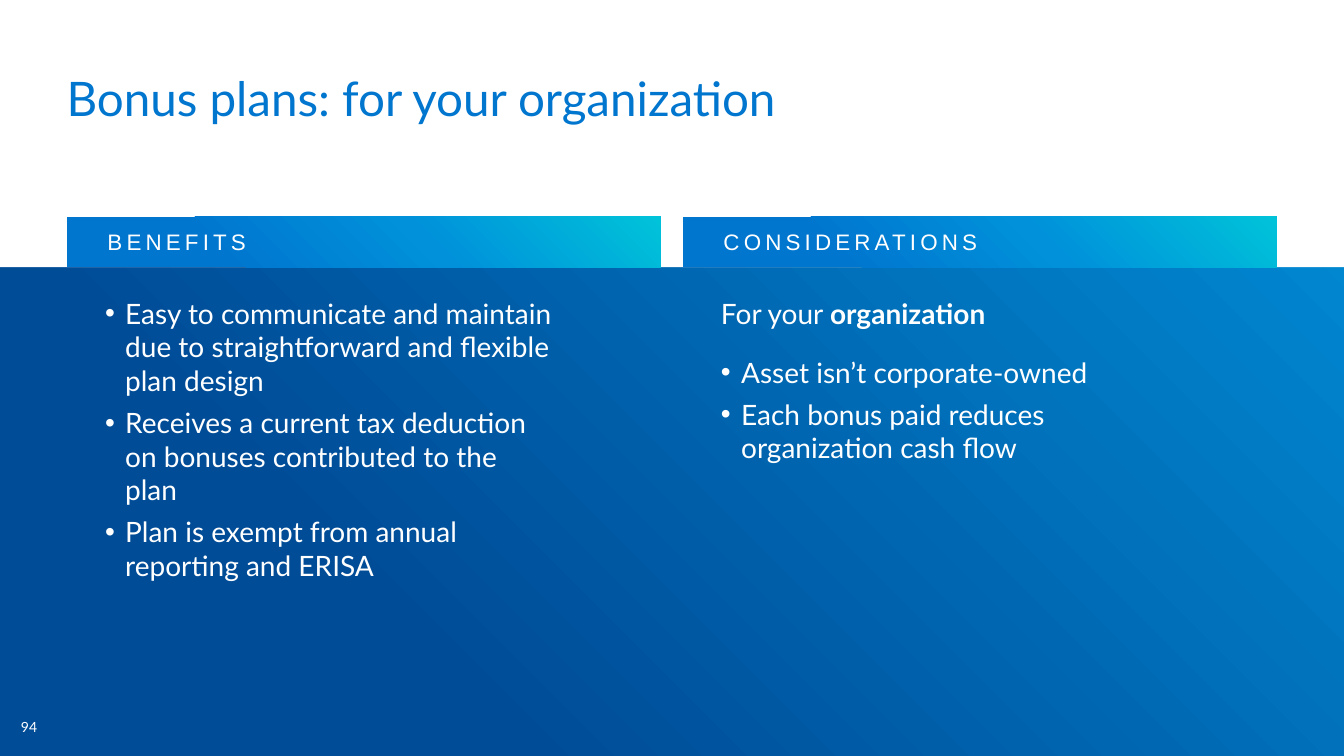
from lxml import etree
from pptx import Presentation
from pptx.dml.color import RGBColor
from pptx.enum.shapes import MSO_SHAPE
from pptx.enum.text import MSO_ANCHOR, MSO_AUTO_SIZE, PP_ALIGN
from pptx.oxml.ns import qn
from pptx.util import Pt

RECT = MSO_SHAPE.RECTANGLE
TOP, MIDDLE, BOTTOM = MSO_ANCHOR.TOP, MSO_ANCHOR.MIDDLE, MSO_ANCHOR.BOTTOM
LEFT = PP_ALIGN.LEFT
FIXED = MSO_AUTO_SIZE.NONE

WHITE = RGBColor(0xFF, 0xFF, 0xFF)
NAVY = RGBColor(0x00, 0x4C, 0x97)
BLUE = RGBColor(0x00, 0x76, 0xCF)
SKY = RGBColor(0x00, 0x91, 0xDA)
TEAL = RGBColor(0x00, 0xC3, 0xD9)


def add_rect(x, y, w, h, stops):
    """Add a borderless rectangle, plain for one stop, else a gradient."""
    rect = slide.shapes.add_shape(RECT, Pt(x), Pt(y), Pt(w), Pt(h))
    rect.shadow.inherit = False
    rect.line.fill.background()
    if len(stops) == 1:
        rect.fill.solid()
        rect.fill.fore_color.rgb = stops[0][1]
        return rect
    rect.fill.gradient()
    rect.fill.gradient_angle = 45
    ramp = rect._element.spPr.find(".//" + qn("a:gsLst"))
    ramp.clear()
    for place, color in stops:
        stop = etree.SubElement(ramp, qn("a:gs"), pos=str(place * 1000))
        etree.SubElement(stop, qn("a:srgbClr"), val=str(color))
    return rect


def set_frame(shape, anchor, left=0, right=0, edge=0):
    """Set wrapping, anchor and insets of a text frame."""
    frame = shape.text_frame
    frame.word_wrap = True
    frame.auto_size = FIXED
    frame.vertical_anchor = anchor
    frame.margin_left, frame.margin_right = Pt(left), Pt(right)
    frame.margin_top = frame.margin_bottom = Pt(edge)
    return frame


prs = Presentation()
prs.slide_width, prs.slide_height = Pt(960), Pt(540)
slide = prs.slides.add_slide(prs.slide_layouts[3])
title, *bodies = slide.placeholders

# Backdrop, placed behind the placeholders
back = add_rect(0, 0, 960, 540, [(25, NAVY), (99, SKY)])
band = add_rect(0, 0, 960, 190.8, [(0, WHITE)])
for depth, rect in enumerate((back, band), start=2):
    slide.shapes._spTree.insert(depth, rect._element)

# Title
title.left, title.top, title.width, title.height = Pt(47.5), Pt(49), Pt(864), Pt(36)
frame = set_frame(title, TOP)
frame.text = "Bonus plans: for your organization"
para = frame.paragraphs[0]
para.alignment = LEFT
para.font.name, para.font.size = "Lato", Pt(34)
para.font.color.rgb = BLUE

# Column headings
for x, label in ((48, "BENEFITS"), (488, "CONSIDERATIONS")):
    head = add_rect(x, 154.8, 424, 36, [(25, BLUE), (60, SKY), (100, TEAL)])
    frame = set_frame(head, MIDDLE, 28.8, 28.8, 3.6)
    frame.text = label
    para = frame.paragraphs[0]
    para.alignment = LEFT
    font = para.runs[0].font
    font.name, font.size = "Arial", Pt(16)
    font.color.rgb = WHITE
    font._element.set("spc", "300")

# Column lists: left, width, height, right inset, lead line, bullets
columns = [
    (75, 341.3, 269.3, 21.6, None, [
        "Easy to communicate and maintain due to straightforward and flexible plan design",
        "Receives a current tax deduction on bonuses contributed to the plan",
        "Plan is exempt from annual reporting and ERISA",
    ]),
    (515, 316.8, 251.3, 0, ("For your ", "organization"), [
        "Asset isn’t corporate-owned",
        "Each bonus paid reduces organization cash flow",
    ]),
]
for body, (x, w, h, inset, lead, items) in zip(bodies, columns):
    body.left, body.top, body.width, body.height = Pt(x), Pt(211.7), Pt(w), Pt(h)
    frame = set_frame(body, TOP, right=inset)
    lines = ([lead] if lead else []) + [(item,) for item in items]
    for i, parts in enumerate(lines):
        para = frame.add_paragraph() if i else frame.paragraphs[0]
        props = para._p.get_or_add_pPr()
        is_lead = parts is lead
        indent = 0 if is_lead else Pt(14.4)
        props.set("marL", str(indent))
        props.set("indent", str(-indent))
        if is_lead:
            etree.SubElement(props, qn("a:buNone"))
        else:
            etree.SubElement(props, qn("a:buFont"), typeface="Arial")
            etree.SubElement(props, qn("a:buChar"), char="•")
        para.space_before = Pt(6 if i else 0)
        para.space_after = Pt(12 if is_lead else 0)
        para.font.name, para.font.size = "Lato", Pt(20)
        for j, part in enumerate(parts):
            run = para.add_run()
            run.text = part
            run.font.name, run.font.size = "Lato", Pt(20)
            run.font.color.rgb = WHITE
            run.font.bold = j == 1

# Slide number
number = slide.shapes.add_textbox(Pt(15), Pt(495.4), Pt(33), Pt(29.5))
frame = set_frame(number, BOTTOM)
frame.text = "94"
font = frame.paragraphs[0].runs[0].font
font.name, font.size = "Lato", Pt(10)
font.color.rgb = WHITE

prs.save("out.pptx")
